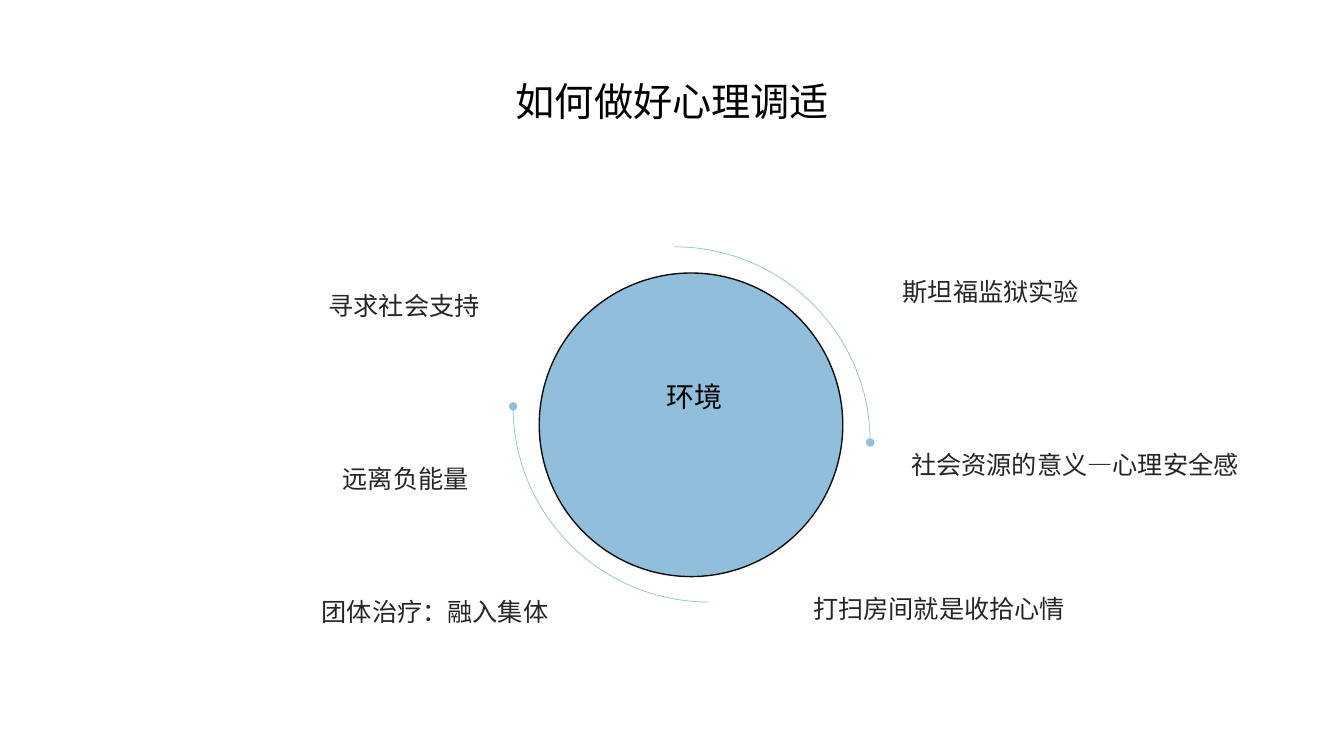
from dataclasses import dataclass

import lxml.etree
import pptx
import pptx.dml.color
import pptx.enum.shapes
import pptx.enum.text
import pptx.oxml.ns
import pptx.util

Cm = pptx.util.Cm
Shape = pptx.enum.shapes.MSO_SHAPE
Align = pptx.enum.text.PP_ALIGN


@dataclass(frozen=True)
class Theme:
    font: str = "Noto Sans CJK SC"
    ink: str = "000000"
    label: str = "262626"
    outline: str = "0D0D0D"
    accent: str = "91BFDB"
    title_size: int = 28
    center_size: int = 20
    label_size: int = 18


def rgb(value):
    return pptx.dml.color.RGBColor.from_string(value)


class SlideBuilder:
    def __init__(self, slide, theme):
        self.slide = slide
        self.theme = theme

    def text(self, content, left, top, width, height, size, color, align, spacing=1.5):
        box = self.slide.shapes.add_textbox(Cm(left), Cm(top), Cm(width), Cm(height))
        frame = box.text_frame
        frame.word_wrap = True
        frame.auto_size = pptx.enum.text.MSO_AUTO_SIZE.SHAPE_TO_FIT_TEXT
        paragraph = frame.paragraphs[0]
        paragraph.text = content
        paragraph.alignment = align
        paragraph.line_spacing = spacing
        font = paragraph.font
        font.name = self.theme.font
        font.size = pptx.util.Pt(size)
        font.color.rgb = rgb(color)
        east_asian = lxml.etree.SubElement(font._rPr, pptx.oxml.ns.qn("a:ea"))
        east_asian.set("typeface", self.theme.font)

    def label(self, content, left, top, width, align):
        self.text(content, left, top, width, 1.3, self.theme.label_size, self.theme.label, align)

    def round_shape(self, kind, left, top, diameter, line_color, line_width):
        shape = self.slide.shapes.add_shape(kind, Cm(left), Cm(top), Cm(diameter), Cm(diameter))
        shape.shadow.inherit = False
        shape.line.color.rgb = rgb(line_color)
        shape.line.width = pptx.util.Pt(line_width)
        return shape

    def circle(self, left, top, diameter):
        shape = self.round_shape(Shape.OVAL, left, top, diameter, self.theme.outline, 1)
        shape.fill.solid()
        shape.fill.fore_color.rgb = rgb(self.theme.accent)

    def dotted_end_arc(self, left, top, diameter, rotation):
        shape = self.round_shape(Shape.ARC, left, top, diameter, self.theme.accent, 0.5)
        shape.fill.background()
        shape.rotation = rotation
        line = shape.line._get_or_add_ln()
        lxml.etree.SubElement(line, pptx.oxml.ns.qn("a:tailEnd")).set("type", "oval")


def main():
    presentation = pptx.Presentation()
    presentation.slide_width = Cm(33.87)
    presentation.slide_height = Cm(19.05)
    slide = presentation.slides.add_slide(presentation.slide_layouts[6])
    theme = Theme()
    builder = SlideBuilder(slide, theme)

    labels = [
        ("寻求社会支持", 5.51, 6.81, 6.83, Align.RIGHT),
        ("远离负能量", 5.79, 11.18, 6.27, Align.RIGHT),
        ("团体治疗：融入集体", 7.67, 14.53, 6.4, Align.RIGHT),
        ("斯坦福监狱实验", 22.5, 6.45, 6.43, Align.LEFT),
        ("社会资源的意义—心理安全感", 22.71, 10.82, 9.04, Align.LEFT),
        ("打扫房间就是收拾心情", 20.24, 14.45, 7.92, Align.LEFT),
    ]
    for label in labels:
        builder.label(*label)

    builder.circle(13.59, 6.88, 7.65)
    builder.dotted_end_arc(12.07, 6.22, 9.86, 0)
    builder.dotted_end_arc(12.93, 5.31, 9.86, 180)
    builder.text("环境", 15.19, 9.02, 4.62, 1.4, theme.center_size, theme.ink, Align.CENTER)
    builder.text("如何做好心理调适", 11.89, 1.83, 10.11, 1.45,
                 theme.title_size, theme.ink, Align.CENTER, 1.0)
    presentation.save("out.pptx")


if __name__ == "__main__":
    main()
